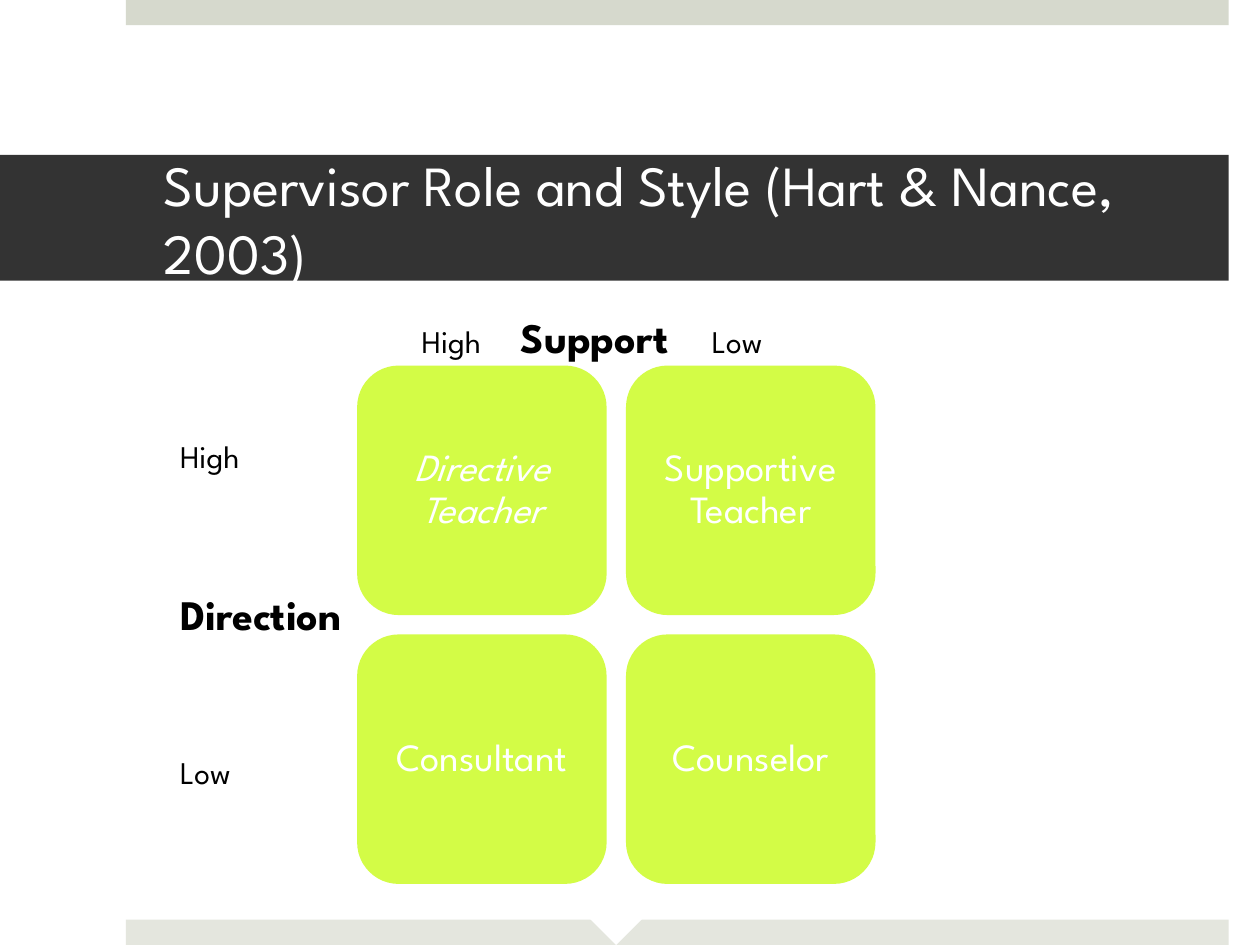
"""Build the supervisor role and style matrix slide."""
from lxml import etree
from pptx import Presentation
from pptx.dml.color import RGBColor
from pptx.enum.shapes import MSO_SHAPE
from pptx.enum.text import MSO_ANCHOR, MSO_AUTO_SIZE, PP_ALIGN
from pptx.oxml.ns import qn
from pptx.util import Cm, Pt

RECTANGLE = MSO_SHAPE.RECTANGLE
DIAMOND = MSO_SHAPE.DIAMOND
ROUNDED = MSO_SHAPE.ROUNDED_RECTANGLE
MIDDLE = MSO_ANCHOR.MIDDLE
CENTER = PP_ALIGN.CENTER
LEFT = PP_ALIGN.LEFT
NO_AUTOFIT = MSO_AUTO_SIZE.NONE
THEME = {
    "font": "League Spartan",
    "white": RGBColor.from_string("FFFFFF"),
    "black": RGBColor.from_string("000000"),
    "title_bar": RGBColor.from_string("333333"),
    "top_bar": RGBColor.from_string("D6D9CD"),
    "bottom_bar": RGBColor.from_string("E4E6DE"),
    "tile": RGBColor.from_string("D3FC46"),
    "title_size": Pt(32.4),
    "tile_size": Pt(22),
    "axis_size": Pt(24),
    "level_size": Pt(18),
}


def add_filled_shape(kind, left, top, width, height, color):
    shape = slide.shapes.add_shape(kind, Cm(left), Cm(top), Cm(width), Cm(height))
    shape.shadow.inherit = False
    shape.fill.solid()
    shape.fill.fore_color.rgb = THEME[color]
    shape.line.fill.background()
    return shape


def style_run(run, size, color, bold=False, italic=False):
    run.font.name = THEME["font"]
    run.font.size = THEME[size]
    run.font.color.rgb = THEME[color]
    run.font.bold = bold
    run.font.italic = italic


presentation = Presentation()
presentation.slide_width = Cm(25.4)
presentation.slide_height = Cm(19.05)
slide = presentation.slides.add_slide(presentation.slide_layouts[5])

for top, color in ((0, "top_bar"), (18.54, "bottom_bar")):
    add_filled_shape(RECTANGLE, 2.54, top, 22.23, 0.51, color)

title = slide.shapes.title
title.left, title.top, title.width, title.height = Cm(0), Cm(3.12), Cm(24.77), Cm(2.54)
title.fill.solid()
title.fill.fore_color.rgb = THEME["title_bar"]
title_frame = title.text_frame
title_frame.text = "Supervisor Role and Style (Hart & Nance, 2003)"
title_frame.auto_size = NO_AUTOFIT
title_frame.vertical_anchor = MIDDLE
title_frame.margin_left, title_frame.margin_right = Cm(3.3), Cm(0.76)
title_frame.paragraphs[0].alignment = LEFT
style_run(title_frame.paragraphs[0].runs[0], "title_size", "white")

add_filled_shape(DIAMOND, 5.97, 6.15, 12.9, 12.9, "white")

roles = (("Directive Teacher", "Supportive Teacher"), ("Consultant", "Counselor"))
for row, row_roles in enumerate(roles):
    for column, role in enumerate(row_roles):
        tile = add_filled_shape(
            ROUNDED, 7.2 + 5.42 * column, 7.37 + 5.42 * row, 5.03, 5.03, "tile"
        )
        frame = tile.text_frame
        frame.text = role
        frame.word_wrap = True
        frame.vertical_anchor = MIDDLE
        frame.margin_left = frame.margin_right = Cm(0.48)
        paragraph = frame.paragraphs[0]
        paragraph.alignment = CENTER
        paragraph.line_spacing = 0.9
        style_run(paragraph.runs[0], "tile_size", "white", italic=role == "Directive Teacher")

direction_box = slide.shapes.add_textbox(Cm(3.38), Cm(8.69), Cm(4.65), Cm(7.44))
direction_frame = direction_box.text_frame
direction_frame.word_wrap = True
direction_frame.text = "High\nDirection\nLow"
for index, paragraph in enumerate(direction_frame.paragraphs):
    is_axis = index == 1
    paragraph.space_before = Pt(65 if index else 0)
    style_run(paragraph.runs[0], "axis_size" if is_axis else "level_size", "black", bold=is_axis)

support_box = slide.shapes.add_textbox(Cm(8.25), Cm(6.15), Cm(10.8), Cm(1.27))
support_box.text_frame.word_wrap = True
support_paragraph = support_box.text_frame.paragraphs[0]
for text, is_axis in (("High\t", False), ("Support\t", True), ("Low", False)):
    run = support_paragraph.add_run()
    run.text = text
    style_run(run, "axis_size" if is_axis else "level_size", "black", bold=is_axis)
properties = support_paragraph._p.get_or_add_pPr()
tab_list = etree.SubElement(properties, qn("a:tabLst"))
for position in (2, 5.85):
    etree.SubElement(tab_list, qn("a:tab"), pos=str(Cm(position)), algn="l")

presentation.save("out.pptx")
